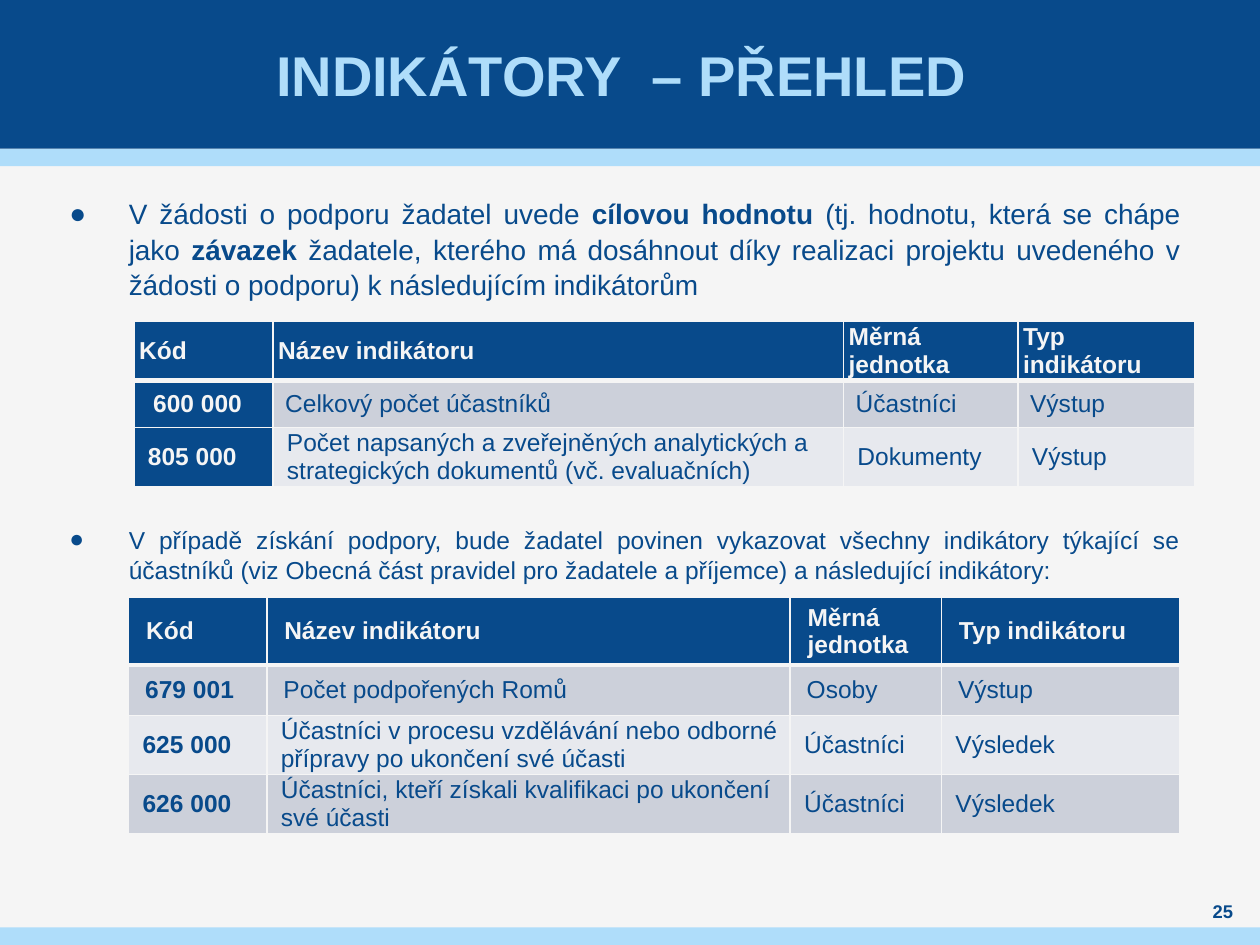
"""Build the indicator overview slide with two bullets and two tables."""
from lxml import etree
from pptx import Presentation
from pptx import util as u
from pptx.dml.color import RGBColor
from pptx.enum import shapes, text
from pptx.oxml import ns

COLORS = {"navy": "084A8B", "sky": "AFDDFA", "paper": "F5F5F5",
          "dark_row": "CCD0DA", "light_row": "E7E9EE"}
FONT = "Arial"
BANDS = [("sky", 85, 10), ("navy", 0, 85), ("sky", 530, 10)]
TITLE = "INDIKÁTORY  – PŘEHLED "
PAGE_NUMBER = "25"
BULLETS = [
    {"size": 16, "before": 6, "spans": [
        ("V žádosti o podporu žadatel uvede ", False),
        ("cílovou hodnotu ", True),
        ("(tj. hodnotu, která se chápe jako ", False),
        ("závazek", True),
        (" žadatele, kterého má dosáhnout díky realizaci projektu uvedeného "
         "v žádosti o podporu) k následujícím indikátorům", False)]},
    {"size": 14, "before": 121, "spans": [
        ("V případě získání podpory, bude žadatel povinen vykazovat všechny "
         "indikátory týkající se účastníků (viz Obecná část pravidel pro "
         "žadatele a příjemce) a následující indikátory:", False)]},
]
HEADER = ["Kód", "Název indikátoru", "Měrná jednotka", "Typ indikátoru"]
TABLES = [
    {"left": 76.5, "top": 183.8, "columns": [79.5, 326, 99.7, 101.3],
     "heights": [31, 27, 31], "insets": [3, 7, 8], "code_fill": "navy",
     "rows": [
         ["600 000", "Celkový počet účastníků", "Účastníci", "Výstup"],
         ["805 000", "Počet napsaných a zveřejněných analytických a "
          "strategických dokumentů (vč. evaluačních)", "Dokumenty", "Výstup"]]},
    {"left": 73.5, "top": 341.5, "columns": [79, 299, 86.5, 136],
     "heights": [38.5, 29, 31.5, 31.5], "insets": [10, 9.5, 8, 8], "code_fill": None,
     "rows": [
         ["679 001", "Počet podpořených Romů", "Osoby", "Výstup"],
         ["625 000", "Účastníci v procesu vzdělávání nebo odborné přípravy "
          "po ukončení své účasti", "Účastníci", "Výsledek"],
         ["626 000", "Účastníci, kteří získali kvalifikaci po ukončení své účasti",
          "Účastníci", "Výsledek"]]},
]


def color(name):
    return RGBColor.from_string(COLORS[name])


def set_font(font, size, name, bold=None):
    font.name, font.size, font.bold = FONT, u.Pt(size), bold
    font.color.rgb = color(name)


def add_child(parent, tag, **attributes):
    return etree.SubElement(parent, ns.qn(tag), attributes)


def add_band(page, fill, top, height):
    band = page.shapes.add_shape(shapes.MSO_SHAPE.RECTANGLE, 0, u.Pt(top),
                                 u.Pt(720), u.Pt(height))
    band.shadow.inherit = False
    band.fill.solid()
    band.fill.fore_color.rgb = color(fill)
    band.line.fill.background()


def add_box(page, left, top, width, height, anchor):
    box = page.shapes.add_textbox(*map(u.Pt, (left, top, width, height)))
    frame = box.text_frame
    frame.word_wrap = True
    frame.vertical_anchor = anchor
    frame.margin_left = frame.margin_right = frame.margin_top = frame.margin_bottom = 0
    return frame


def add_label(page, words, place, size, name):
    para = add_box(page, *place, text.MSO_ANCHOR.MIDDLE).paragraphs[0]
    para.text = words
    para.alignment = text.PP_ALIGN.CENTER
    set_font(para.font, size, name, True)


def add_bullets(page):
    frame = add_box(page, 39.6, 111.6, 635, 340, text.MSO_ANCHOR.TOP)
    for index, bullet in enumerate(BULLETS):
        para = frame.add_paragraph() if index else frame.paragraphs[0]
        para.alignment = text.PP_ALIGN.JUSTIFY
        para.line_spacing = 1.05
        para.space_before, para.space_after = u.Pt(bullet["before"]), u.Pt(6)
        props = para._p.get_or_add_pPr()
        props.set("marL", str(u.Pt(34)))
        props.set("indent", str(u.Pt(-34)))
        add_child(add_child(props, "a:buClr"), "a:srgbClr", val=COLORS["navy"])
        add_child(props, "a:buFont", typeface=FONT)
        add_child(props, "a:buChar", char="●")
        set_font(para.font, bullet["size"], "navy")
        for words, bold in bullet["spans"]:
            span = para.add_run()
            span.text, span.font.bold = words, bold


def set_borders(cell, bottom):
    props = cell._tc.get_or_add_tcPr()
    widths = {"a:lnL": 1, "a:lnR": 1, "a:lnT": 1, "a:lnB": bottom}
    for index, (tag, width) in enumerate(widths.items()):
        line = etree.Element(ns.qn(tag), w=str(u.Pt(width)))
        add_child(add_child(line, "a:solidFill"), "a:srgbClr", val=COLORS["paper"])
        props.insert(index, line)


def fill_cell(cell, words, inset, fill, ink, bold, bottom):
    cell.margin_left, cell.margin_right = u.Pt(inset), u.Pt(5)
    cell.margin_top = cell.margin_bottom = 0
    cell.vertical_anchor = text.MSO_ANCHOR.MIDDLE
    cell.fill.solid()
    cell.fill.fore_color.rgb = color(fill)
    set_borders(cell, bottom)
    para = cell.text_frame.paragraphs[0]
    para.text = words
    set_font(para.font, 14, ink, bold)


def add_indicator_table(page, data):
    rows = [HEADER] + data["rows"]
    columns, heights = data["columns"], data["heights"]
    size = map(u.Pt, (data["left"], data["top"], sum(columns), sum(heights)))
    table = page.shapes.add_table(len(rows), len(columns), *size).table
    for column, width in zip(table.columns, columns):
        column.width = u.Pt(width)
    for r, row in enumerate(rows):
        table.rows[r].height = u.Pt(heights[r])
        for c, words in enumerate(row):
            fill = "dark_row" if r % 2 else "light_row"
            inset = data["insets"][r]
            if r == 0:
                fill = "navy"
            elif c == 0 and data["code_fill"]:
                fill = data["code_fill"]
                inset += 4 if r == 1 else 0
            ink = "paper" if fill == "navy" else "navy"
            fill_cell(table.cell(r, c), words, inset, fill, ink,
                      r == 0 or c == 0, 1 if r else 3)


def main():
    deck = Presentation()
    deck.slide_width, deck.slide_height = u.Pt(720), u.Pt(540)
    page = deck.slides.add_slide(deck.slide_layouts[6])
    page.background.fill.solid()
    page.background.fill.fore_color.rgb = color("paper")
    for band in BANDS:
        add_band(page, *band)
    add_label(page, TITLE, (28, 0, 663, 85), 32, "sky")
    add_bullets(page)
    add_label(page, PAGE_NUMBER, (680.4, 513.4, 36.7, 14.4), 10.5, "navy")
    for data in TABLES:
        add_indicator_table(page, data)
    deck.save("out.pptx")


if __name__ == "__main__":
    main()
